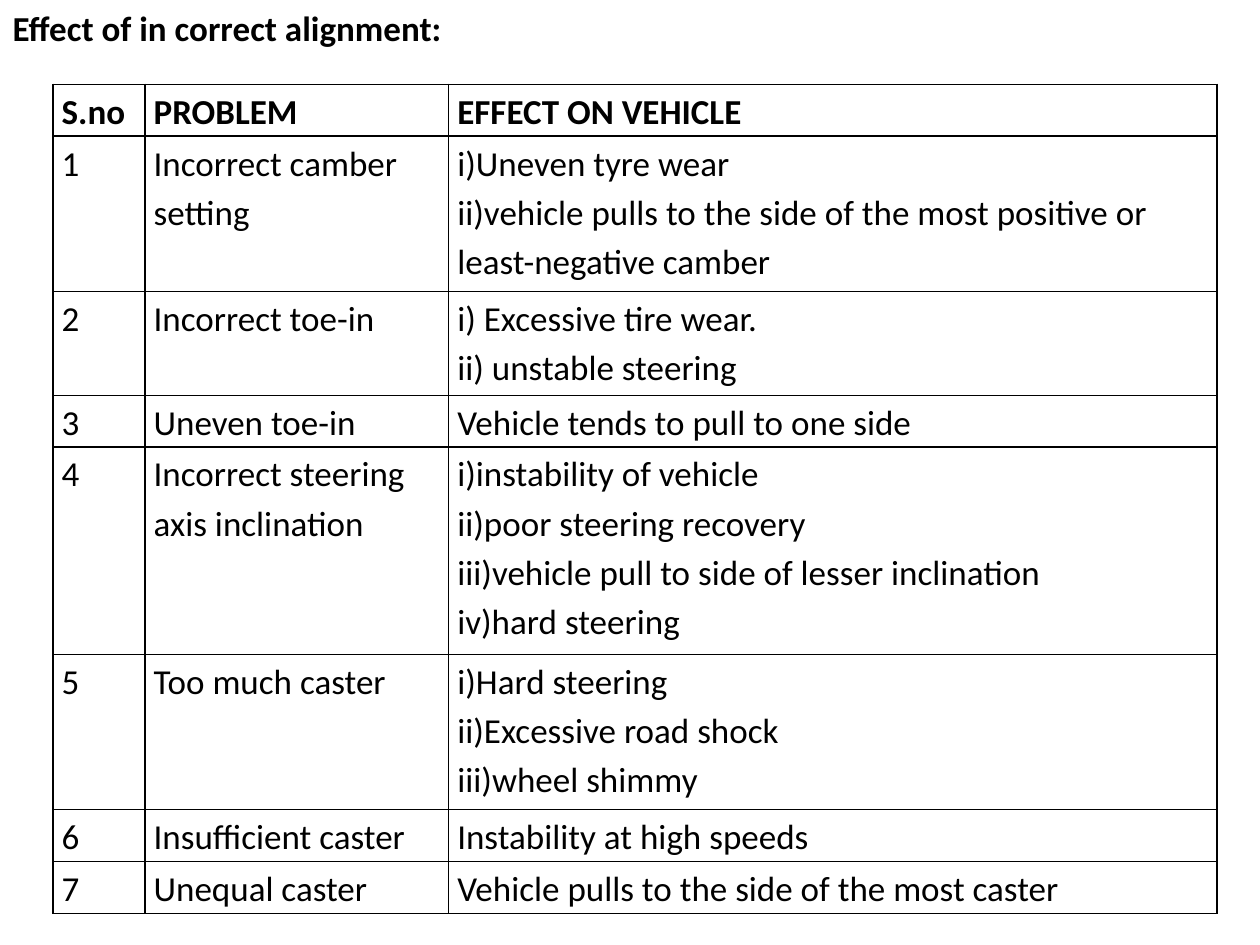
from dataclasses import dataclass

from lxml import etree
from pptx import Presentation
from pptx.dml.color import RGBColor
from pptx.enum.text import MSO_ANCHOR, PP_ALIGN
from pptx.oxml.ns import qn
from pptx.util import Inches, Pt

LEFT = PP_ALIGN.LEFT
TOP = MSO_ANCHOR.TOP
TITLE_ONLY = 5


@dataclass(frozen=True)
class Theme:
    font: str = "Calibri"
    size: int = 20
    ink: str = "000000"
    line_spacing: float = 1.15
    border: int = 1
    cell_inset: float = 0.07


THEME = Theme()

TITLE = "Effect of in correct alignment:"
HEADER = ("S.no", "PROBLEM", ["EFFECT ON VEHICLE"], 1)
# Problem, its effects, and the text lines the row holds
PROBLEMS = [
    ("Incorrect camber setting",
     ["i)Uneven tyre wear",
      "ii)vehicle pulls to the side of the most positive or least-negative camber"], 3),
    ("Incorrect toe-in", ["i) Excessive tire wear.", "ii) unstable steering"], 2),
    ("Uneven toe-in", ["Vehicle tends to pull to one side"], 1),
    ("Incorrect steering axis inclination",
     ["i)instability of vehicle", "ii)poor steering recovery",
      "iii)vehicle pull to side of lesser inclination", "iv)hard steering"], 4),
    ("Too much caster",
     ["i)Hard steering", "ii)Excessive road shock", "iii)wheel shimmy"], 3),
    ("Insufficient caster", ["Instability at high speeds"], 1),
    ("Unequal caster", ["Vehicle pulls to the side of the most caster"], 1),
]

TABLE_LEFT, TABLE_TOP, TABLE_HEIGHT = 0.42, 0.67, 6.58
COLUMNS = (0.73, 2.41, 6.1)


def style_paragraph(p, bold, spacing=1.0):
    p.alignment = LEFT
    p.line_spacing = spacing
    p.font.name = THEME.font
    p.font.size = Pt(THEME.size)
    p.font.bold = bold
    p.font.color.rgb = RGBColor.from_string(THEME.ink)


def add_title(s, text):
    sp = s.shapes.title
    sp.left, sp.top, sp.width, sp.height = 0, 0, Inches(4), Inches(0.44)
    tf = sp.text_frame
    tf.text = text
    tf.word_wrap = True
    tf.vertical_anchor = TOP
    style_paragraph(tf.paragraphs[0], True)


def set_borders(cell):
    tc_pr = cell._tc.get_or_add_tcPr()
    for i, side in enumerate(("lnL", "lnR", "lnT", "lnB")):
        ln = etree.Element(qn(f"a:{side}"), w=str(Pt(THEME.border)))
        fill = etree.SubElement(ln, qn("a:solidFill"))
        etree.SubElement(fill, qn("a:srgbClr"), val=THEME.ink)
        tc_pr.insert(i, ln)


def fill_cell(cell, lines, bold):
    cell.text = "\n".join(lines)
    cell.margin_left = cell.margin_right = Inches(THEME.cell_inset)
    cell.margin_top = cell.margin_bottom = 0
    cell.vertical_anchor = TOP
    cell.fill.background()
    set_borders(cell)
    for p in cell.text_frame.paragraphs:
        style_paragraph(p, bold, THEME.line_spacing)


def add_problem_table(s, records):
    table = s.shapes.add_table(
        len(records), len(COLUMNS), Inches(TABLE_LEFT), Inches(TABLE_TOP),
        Inches(sum(COLUMNS)), Inches(TABLE_HEIGHT)).table
    for column, width in zip(table.columns, COLUMNS):
        column.width = Inches(width)
    # Each row's height is its share of all text lines
    line_height = TABLE_HEIGHT / sum(record[-1] for record in records)
    for i, (number, problem, effects, lines) in enumerate(records):
        table.rows[i].height = Inches(line_height * lines)
        for j, content in enumerate(([number], [problem], effects)):
            fill_cell(table.cell(i, j), content, bold=i == 0)


def main():
    prs = Presentation()
    prs.slide_width, prs.slide_height = Inches(10), Inches(7.5)
    s = prs.slides.add_slide(prs.slide_layouts[TITLE_ONLY])
    add_title(s, TITLE)
    numbered = [(str(n), *problem) for n, problem in enumerate(PROBLEMS, 1)]
    add_problem_table(s, [HEADER, *numbered])
    prs.save("out.pptx")


if __name__ == "__main__":
    main()
